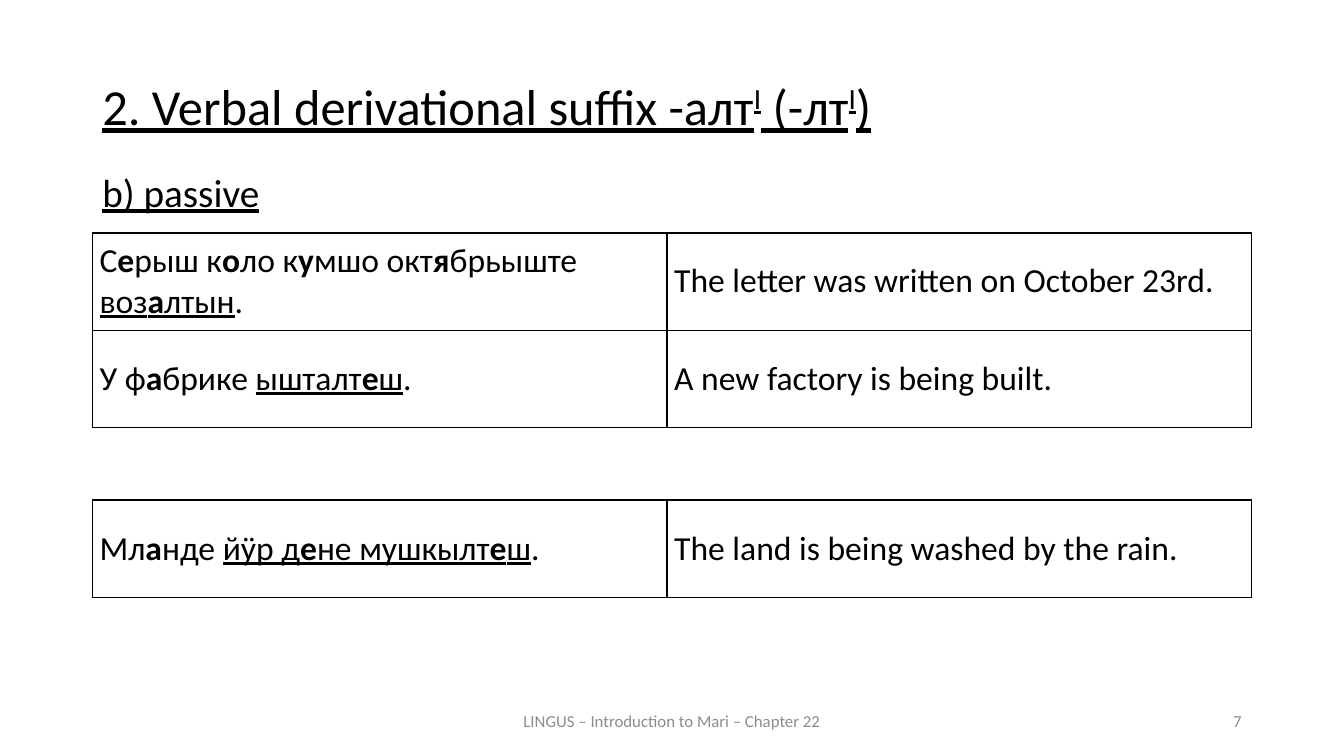
from lxml import etree
from pptx import Presentation
from pptx.dml.color import RGBColor
from pptx.enum.text import MSO_ANCHOR, PP_ALIGN
from pptx.oxml.ns import qn
from pptx.util import Cm, Pt

LEFT, CENTER, RIGHT, JUSTIFY = PP_ALIGN.LEFT, PP_ALIGN.CENTER, PP_ALIGN.RIGHT, PP_ALIGN.JUSTIFY
TOP, MIDDLE = MSO_ANCHOR.TOP, MSO_ANCHOR.MIDDLE
BLACK, GREY = "000000", "8C8C8C"
MARGIN, WIDTH = Cm(2.33), Cm(29.21)


def rgb(value):
    return RGBColor.from_string(value)


def write_marked(paragraph, marked, size, color):
    for u, underlined in enumerate(marked.split("_")):
        for b, stressed in enumerate(underlined.split("*")):
            for s, piece in enumerate(stressed.split("^")):
                if not piece:
                    continue
                run = paragraph.add_run()
                run.text = piece
                formats = {"name": "Calibri", "size": Pt(size),
                           "bold": b % 2 == 1, "underline": u % 2 == 1}
                for key, value in formats.items():
                    setattr(run.font, key, value)
                run.font.color.rgb = rgb(color)
                if s % 2:
                    run.font._element.set("baseline", "30000")


prs = Presentation()
prs.slide_width, prs.slide_height = Cm(33.87), Cm(19.05)
slide = prs.slides.add_slide(prs.slide_layouts[6])

lines = [
    ("_2. Verbal derivational suffix -алт^I^ (-лт^I^)_", MARGIN, Cm(1.93), WIDTH, Cm(2.11),
     36, BLACK, JUSTIFY, TOP, 0.9),
    ("LINGUS – Introduction to Mari – Chapter 22", Cm(11.22), Cm(17.65), Cm(11.43), Cm(1.02),
     12, GREY, CENTER, MIDDLE, 1.0),
    ("7", Cm(23.92), Cm(17.65), Cm(7.62), Cm(1.02), 12, GREY, RIGHT, MIDDLE, 1.0),
    ("_b) passive_", MARGIN, Cm(4.24), WIDTH, Cm(1.47), 28, BLACK, LEFT, TOP, 0.9),
]
for marked, left, top, width, height, size, color, alignment, anchor, spacing in lines:
    frame = slide.shapes.add_textbox(left, top, width, height).text_frame
    frame.word_wrap = True
    frame.vertical_anchor = anchor
    paragraph = frame.paragraphs[0]
    paragraph.alignment = alignment
    paragraph.line_spacing = spacing
    write_marked(paragraph, marked, size, color)

example_groups = [
    (Cm(5.87), [
        ("С*е*рыш к*о*ло к*у*мшо окт*я*брьыште _воз*а*лтын_.",
         "The letter was written on October 23rd."),
        ("У ф*а*брике _ышталт*е*ш_.", "A new factory is being built."),
    ]),
    (Cm(12.6), [
        ("Мл*а*нде _йӱр д*е*не мушкылт*е*ш_.", "The land is being washed by the rain."),
    ]),
]
for top, examples in example_groups:
    row_height = Cm(2.45)
    table = slide.shapes.add_table(
        len(examples), 2, MARGIN, top, WIDTH, row_height * len(examples)).table
    table.first_row = table.horz_banding = False
    table.columns[0].width, table.columns[1].width = Cm(14.48), Cm(14.73)
    for r, sentences in enumerate(examples):
        table.rows[r].height = row_height
        for c, sentence in enumerate(sentences):
            cell = table.cell(r, c)
            layout = {"margin_left": Cm(0.18), "margin_right": Cm(0.18),
                      "margin_top": 0, "margin_bottom": 0, "vertical_anchor": MIDDLE}
            for key, value in layout.items():
                setattr(cell, key, value)
            write_marked(cell.text_frame.paragraphs[0], sentence, 24, BLACK)
            borders = {"a:lnL": 2.25 if c else 1.5, "a:lnR": 1.5 if c else 2.25,
                       "a:lnT": 1 if r else 1.5, "a:lnB": 1}
            for side, points in borders.items():
                border = etree.SubElement(cell._tc.get_or_add_tcPr(), qn(side), w=str(Pt(points)))
                fill = etree.SubElement(border, qn("a:solidFill"))
                etree.SubElement(fill, qn("a:srgbClr"), val=BLACK)
            cell.fill.background()

prs.save("out.pptx")
